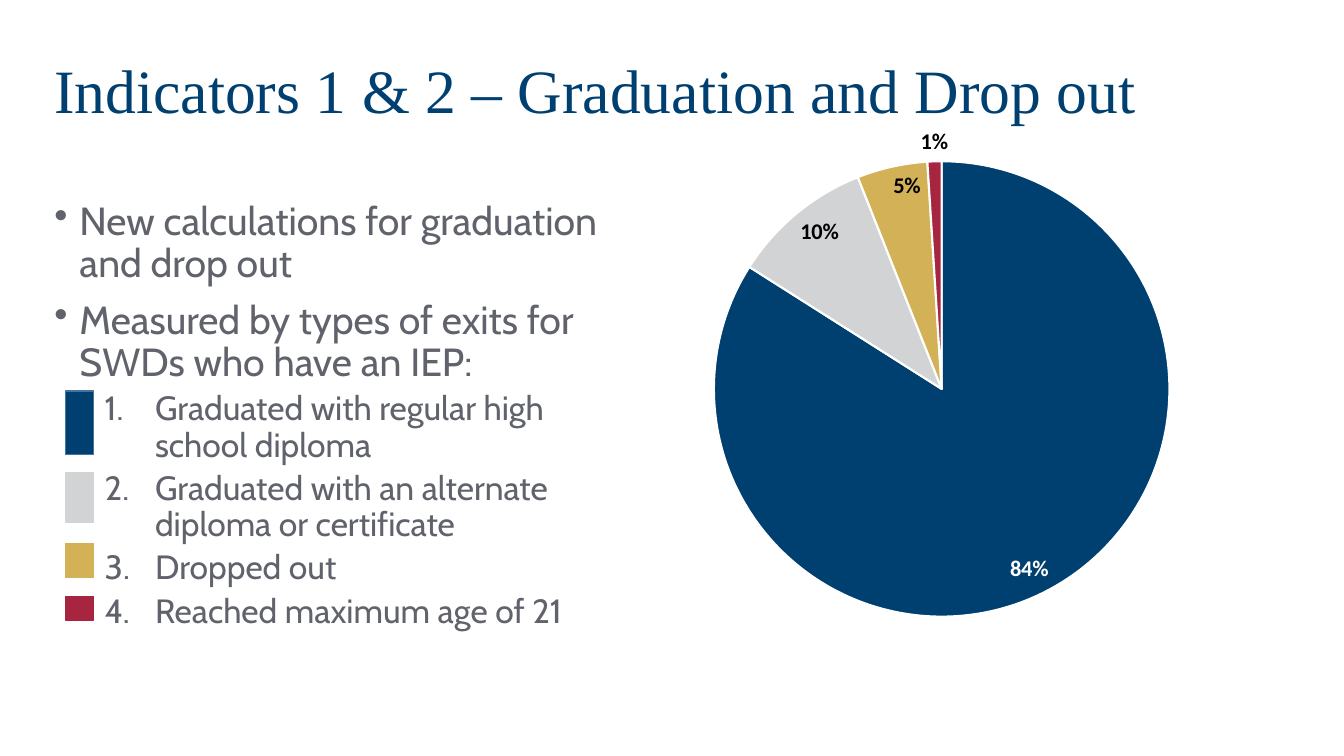
import dataclasses

import lxml.etree
import pptx
import pptx.chart.data
import pptx.dml.color
import pptx.enum.chart
import pptx.enum.shapes
import pptx.enum.text
import pptx.oxml.ns
import pptx.util

Inches = pptx.util.Inches
Pt = pptx.util.Pt


@dataclasses.dataclass(frozen=True)
class Theme:
    heading_font: str = "Times New Roman"
    body_font: str = "Cabin"
    chart_font: str = "Calibri"
    heading_size: int = 44
    bullet_size: int = 28
    exit_size: int = 24
    share_size: int = 16
    navy: str = "004071"
    navy_edge: str = "43739E"
    silver: str = "D1D3D4"
    gold: str = "D3B257"
    crimson: str = "A7253F"
    text: str = "60636B"
    white: str = "FFFFFF"
    black: str = "000000"


THEME = Theme()
POSITION = pptx.enum.chart.XL_LABEL_POSITION
BULLETS = [
    "New calculations for graduation and drop out",
    "Measured by types of exits for SWDs who have an IEP:",
]
EXITS = [
    ("Graduated with regular high school diploma", 0.84, THEME.navy),
    ("Graduated with an alternate diploma or certificate", 0.1, THEME.silver),
    ("Dropped out", 0.05, THEME.gold),
    ("Reached maximum age of 21", 0.01, THEME.crimson),
]
KEY_SPANS = [(0, 0.63), (0.81, 0.49), (1.51, 0.34), (2.04, 0.23)]


def rgb(value):
    return pptx.dml.color.RGBColor.from_string(value)


def style_font(font, name, size, color, bold=False):
    font.name = name
    font.size = Pt(size)
    font.bold = bold
    font.color.rgb = rgb(color)


def add_frame(slide, left, top, width, height):
    frame = slide.shapes.add_textbox(
        Inches(left), Inches(top), Inches(width), Inches(height)
    ).text_frame
    frame.word_wrap = True
    return frame


def add_heading(slide, left, top, width, height):
    frame = add_frame(slide, left, top, width, height)
    frame.vertical_anchor = pptx.enum.text.MSO_ANCHOR.MIDDLE
    heading = frame.paragraphs[0]
    heading.text = "Indicators 1 & 2 – Graduation and Drop out"
    heading.line_spacing = 0.9
    style_font(heading.font, THEME.heading_font, THEME.heading_size, THEME.navy)


def add_marker(paragraph, margin, hanging, tag, **attributes):
    properties = paragraph._p.get_or_add_pPr()
    properties.set("marL", str(Inches(margin)))
    properties.set("indent", str(-Inches(hanging)))
    lxml.etree.SubElement(properties, pptx.oxml.ns.qn(tag), **attributes)


def add_exit_types(slide, left, top, width, height):
    frame = add_frame(slide, left, top, width, height)
    lines = [(bullet, 0) for bullet in BULLETS] + [(name, 1) for name, _, _ in EXITS]
    for index, (line, level) in enumerate(lines):
        paragraph = frame.add_paragraph() if index else frame.paragraphs[0]
        paragraph.text = line
        paragraph.level = level
        if level:
            add_marker(paragraph, 1, 0.5, "a:buAutoNum", type="arabicPeriod")
        else:
            add_marker(paragraph, 0.25, 0.25, "a:buChar", char="•")
        paragraph.line_spacing = 0.9
        if index:
            paragraph.space_before = Pt(5 if level else 10)
        size = THEME.exit_size if level else THEME.bullet_size
        style_font(paragraph.font, THEME.body_font, size, THEME.text)


def set_plot_layout(chart, **fractions):
    qn = pptx.oxml.ns.qn
    plot_area = chart._chartSpace.chart.plotArea
    layout = plot_area.find(qn("c:layout"))
    if layout is None:
        layout = lxml.etree.Element(qn("c:layout"))
        plot_area.insert(0, layout)
    manual = lxml.etree.SubElement(layout, qn("c:manualLayout"))
    settings = {"layoutTarget": "inner", "xMode": "edge", "yMode": "edge", **fractions}
    for name, value in settings.items():
        lxml.etree.SubElement(manual, qn(f"c:{name}"), val=str(value))


def add_exit_pie(slide, left, top, width, height):
    shares = pptx.chart.data.CategoryChartData(number_format="0%")
    shares.categories = [str(number) for number in range(1, len(EXITS) + 1)]
    shares.add_series("Series 1", [share for _, share, _ in EXITS])
    chart = slide.shapes.add_chart(
        pptx.enum.chart.XL_CHART_TYPE.PIE,
        Inches(left), Inches(top), Inches(width), Inches(height), shares,
    ).chart
    chart.has_legend = False
    chart.has_title = False
    style_font(chart.font, THEME.chart_font, THEME.share_size, THEME.black)
    set_plot_layout(chart, x=0.18, y=0.09, w=0.64, h=0.88)
    pie = chart.plots[0]
    pie.vary_by_categories = True
    series = pie.series[0]
    labels = series.data_labels
    labels.show_value = True
    labels.show_percentage = False
    labels.number_format = "0%"
    labels.number_format_is_linked = False
    labels.position = POSITION.INSIDE_END
    style_font(labels.font, THEME.chart_font, THEME.share_size, THEME.black, True)
    for index, (_, share, color) in enumerate(EXITS):
        point = series.points[index]
        point.format.fill.solid()
        point.format.fill.fore_color.rgb = rgb(color)
        point.format.line.color.rgb = rgb(THEME.white)
        point.format.line.width = Pt(1.5)
        label_color = THEME.white if color == THEME.navy else THEME.black
        label = point.data_label
        style_font(label.font, THEME.chart_font, THEME.share_size, label_color, True)
        label.position = POSITION.OUTSIDE_END if share < 0.05 else POSITION.INSIDE_END


def add_color_key(slide, left, top, width):
    for (_, _, color), (offset, height) in zip(EXITS, KEY_SPANS):
        swatch = slide.shapes.add_shape(
            pptx.enum.shapes.MSO_SHAPE.RECTANGLE,
            Inches(left), Inches(top + offset), Inches(width), Inches(height),
        )
        swatch.shadow.inherit = False
        swatch.fill.solid()
        swatch.fill.fore_color.rgb = rgb(color)
        swatch.line.color.rgb = rgb(THEME.navy_edge if color == THEME.navy else color)
        swatch.line.width = Pt(1)


def build_indicator_slide(presentation):
    slide = presentation.slides.add_slide(presentation.slide_layouts[6])
    add_heading(slide, 0.44, 0.16, 12.43, 1.53)
    add_exit_types(slide, 0.44, 1.95, 6, 4.34)
    add_exit_pie(slide, 5.81, 1.13, 7.06, 5.15)
    add_color_key(slide, 0.65, 3.88, 0.28)


def main():
    presentation = pptx.Presentation()
    presentation.slide_width = Inches(13.33)
    presentation.slide_height = Inches(7.5)
    build_indicator_slide(presentation)
    presentation.save("out.pptx")


if __name__ == "__main__":
    main()
